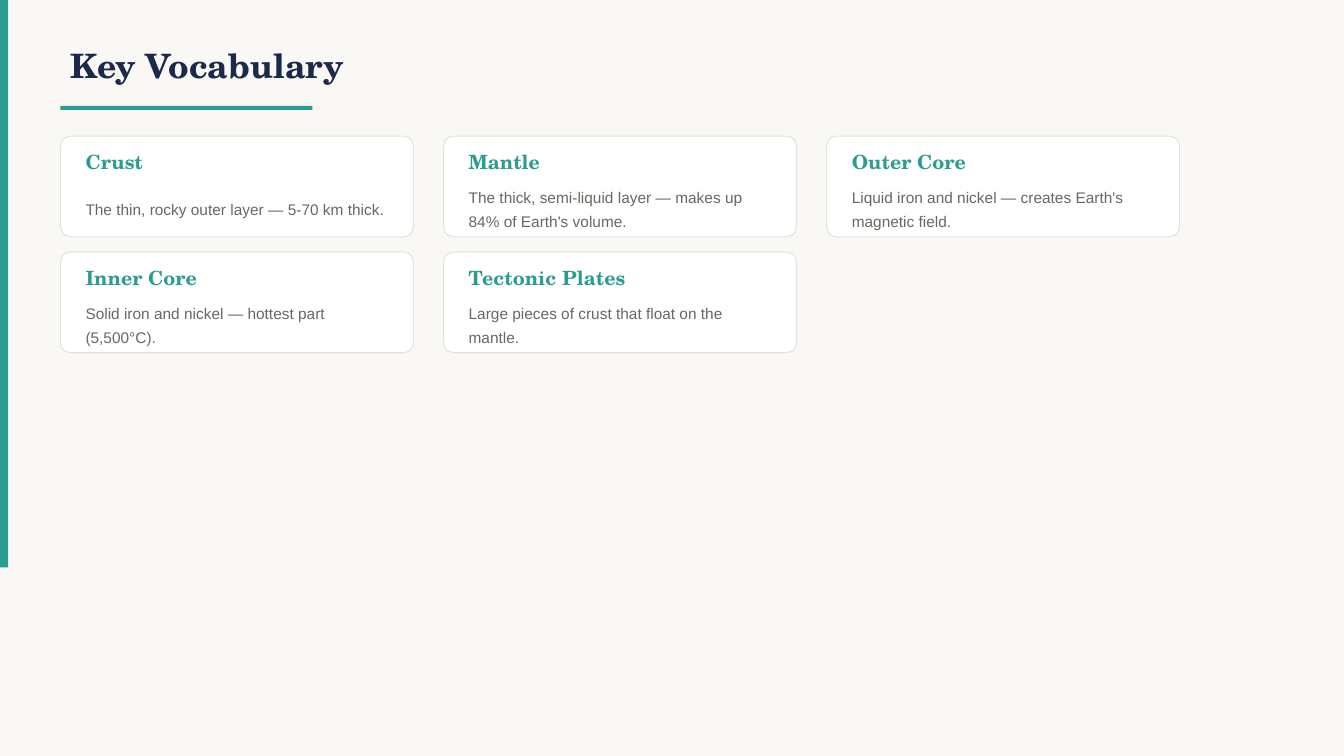
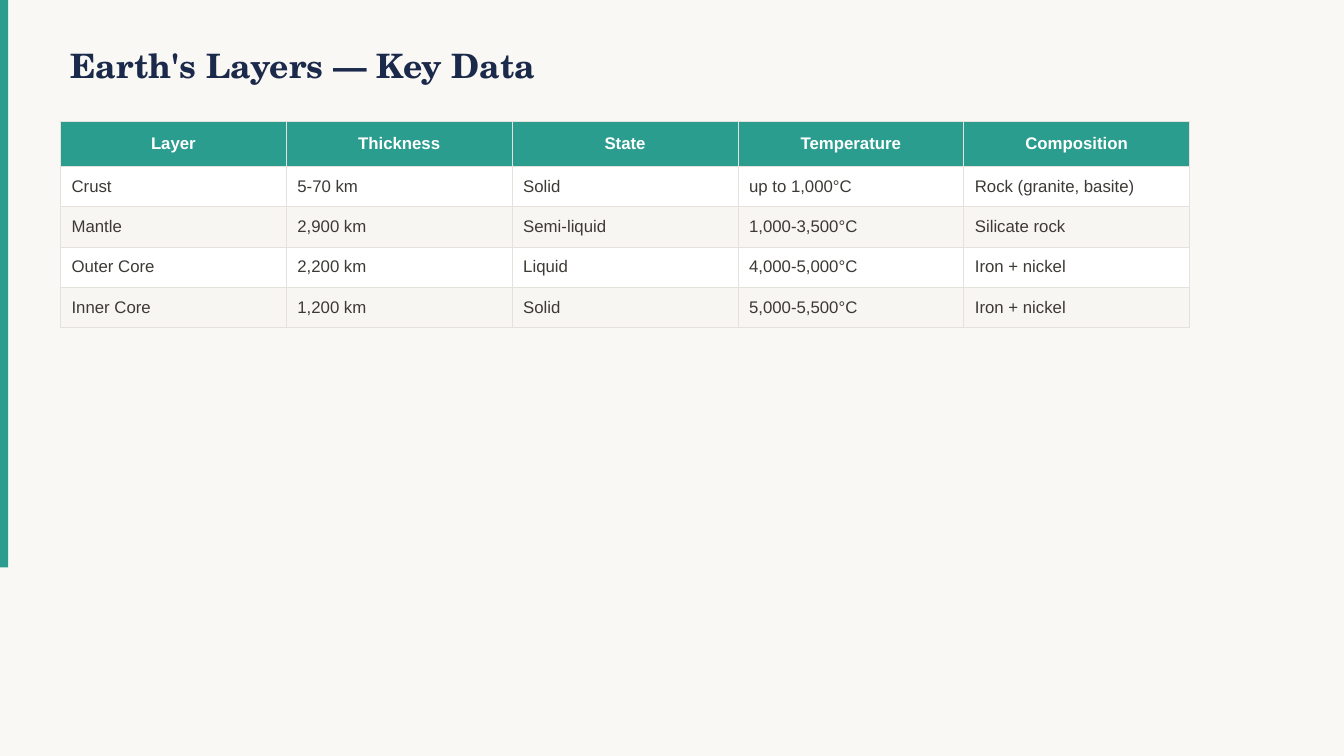
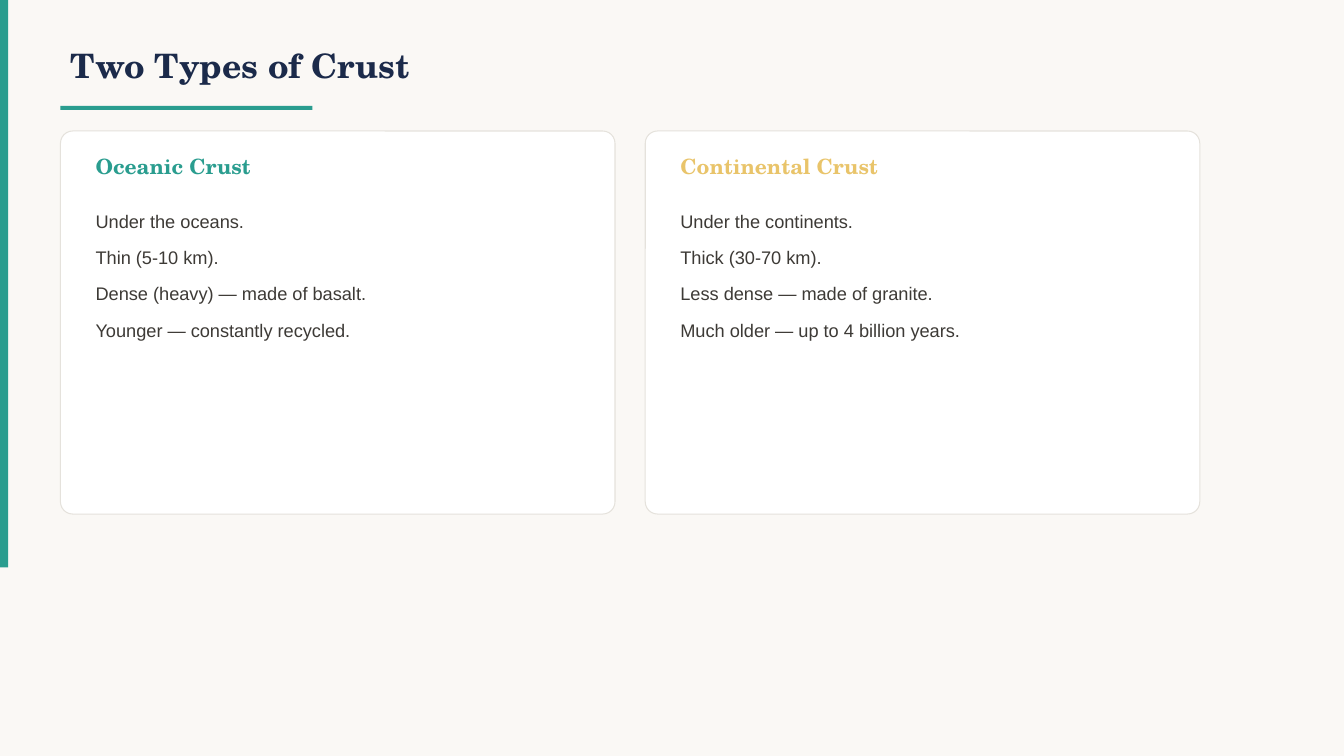
from lxml import etree
from pptx import Presentation
from pptx.dml.color import RGBColor
from pptx.enum.shapes import MSO_SHAPE
from pptx.enum.text import MSO_ANCHOR, PP_ALIGN
from pptx.oxml.ns import qn
from pptx.util import Inches, Pt

RECT, ROUND = MSO_SHAPE.RECTANGLE, MSO_SHAPE.ROUNDED_RECTANGLE
TOP, MIDDLE = MSO_ANCHOR.TOP, MSO_ANCHOR.MIDDLE
LEFT, CENTER = PP_ALIGN.LEFT, PP_ALIGN.CENTER

CREAM = RGBColor(0xFA, 0xF8, 0xF5)
TEAL = RGBColor(0x2A, 0x9D, 0x8F)
NAVY = RGBColor(0x1B, 0x2A, 0x4A)
GOLD = RGBColor(0xE9, 0xC4, 0x6A)
WHITE = RGBColor(0xFF, 0xFF, 0xFF)
STRIPE = RGBColor(0xF8, 0xF6, 0xF3)
BORDER = RGBColor(0xE5, 0xE2, 0xDC)
INK = RGBColor(0x3D, 0x3A, 0x36)
GRAY = RGBColor(0x6B, 0x66, 0x60)

SERIF, SANS = "TeX Gyre Schola", "Arial"
MARGIN = 0.6
CORNER = 0.1


class Deck:
    """Shared style and the slide being built."""

    def __init__(self):
        self.prs = Presentation()
        self.prs.slide_width = Inches(13.33)
        self.prs.slide_height = Inches(7.5)
        self.s = None

    def slide(self, title, underline=True):
        self.s = self.prs.slides.add_slide(self.prs.slide_layouts[6])
        self.s.background.fill.solid()
        self.s.background.fill.fore_color.rgb = CREAM
        self.box(0, 0, 0.08, 5.63, TEAL)
        self.heading(MARGIN, 0.3, 10, 0.7, title, 24, NAVY)
        if underline:
            self.box(MARGIN, 1.05, 2.5, 0.04, TEAL)

    def box(self, x, y, w, h, color, shape=RECT):
        sp = self.s.shapes.add_shape(shape, Inches(x), Inches(y), Inches(w), Inches(h))
        sp.shadow.inherit = False
        sp.fill.solid()
        sp.fill.fore_color.rgb = color
        sp.line.fill.background()
        return sp

    def card(self, x, y, w, h, radius):
        sp = self.box(x, y, w, h, WHITE, ROUND)
        sp.adjustments[0] = round(radius / min(w, h), 3)
        sp.line.color.rgb = BORDER
        sp.line.width = Pt(0.75)

    def style(self, p, size, color, name=SANS, bold=False):
        for r in p.runs:
            r.font.name, r.font.size, r.font.bold = name, Pt(size), bold
            r.font.color.rgb = color

    def text(self, x, y, w, h, text, size, color, name=SANS, bold=False,
             anchor=MIDDLE, spacing=None, after=None):
        sp = self.s.shapes.add_textbox(Inches(x), Inches(y), Inches(w), Inches(h))
        tf = sp.text_frame
        tf.word_wrap = True
        tf.vertical_anchor = anchor
        tf.text = text
        for p in tf.paragraphs:
            p.line_spacing = spacing
            p.space_after = after
            self.style(p, size, color, name, bold)

    def heading(self, x, y, w, h, text, size, color):
        self.text(x, y, w, h, text, size, color, SERIF, True)

    def table(self, x, y, col_w, header_h, row_h, rows):
        n_rows, n_cols = len(rows), len(rows[0])
        height = header_h + row_h * (n_rows - 1)
        table = self.s.shapes.add_table(n_rows, n_cols, Inches(x), Inches(y),
                                        Inches(col_w * n_cols), Inches(height)).table
        for i, row in enumerate(rows):
            header = i == 0
            table.rows[i].height = Inches(header_h if header else row_h)
            fill = TEAL if header else WHITE if i % 2 else STRIPE
            for j, value in enumerate(row):
                cell = table.cell(i, j)
                cell.text = value
                cell.vertical_anchor = MIDDLE
                cell.margin_left = cell.margin_right = Inches(0.11)
                cell.margin_top = cell.margin_bottom = Inches(0.06)
                self.cell_border(cell)
                cell.fill.solid()
                cell.fill.fore_color.rgb = fill
                p = cell.text_frame.paragraphs[0]
                p.alignment = CENTER if header else LEFT
                self.style(p, 12, WHITE if header else INK, bold=header)

    def cell_border(self, cell):
        tc_pr = cell._tc.get_or_add_tcPr()
        for side in ("a:lnL", "a:lnR", "a:lnT", "a:lnB"):
            ln = etree.SubElement(tc_pr, qn(side), w=str(Pt(0.5)))
            solid = etree.SubElement(ln, qn("a:solidFill"))
            etree.SubElement(solid, qn("a:srgbClr"), val=str(BORDER))


def vocabulary(deck):
    deck.slide("Key Vocabulary")
    terms = [
        ("Crust", "The thin, rocky outer layer — 5-70 km thick."),
        ("Mantle", "The thick, semi-liquid layer — makes up 84% of Earth's volume."),
        ("Outer Core", "Liquid iron and nickel — creates Earth's magnetic field."),
        ("Inner Core", "Solid iron and nickel — hottest part (5,500°C)."),
        ("Tectonic Plates", "Large pieces of crust that float on the mantle."),
    ]
    # Three cards to a row
    w, h, gap_x, gap_y = 3.5, 1, 0.3, 0.15
    for i, (term, meaning) in enumerate(terms):
        row, col = divmod(i, 3)
        x, y = MARGIN + col * (w + gap_x), 1.35 + row * (h + gap_y)
        deck.card(x, y, w, h, CORNER)
        deck.heading(x + 0.15, y + 0.08, w - 0.3, 0.35, term, 14, TEAL)
        deck.text(x + 0.15, y + 0.45, w - 0.3, 0.5, meaning, 11, GRAY, spacing=1.3)


def layer_data(deck):
    deck.slide("Earth's Layers — Key Data", underline=False)
    deck.table(MARGIN, 1.2, 2.24, 0.45, 0.4, [
        ("Layer", "Thickness", "State", "Temperature", "Composition"),
        ("Crust", "5-70 km", "Solid", "up to 1,000°C", "Rock (granite, basite)"),
        ("Mantle", "2,900 km", "Semi-liquid", "1,000-3,500°C", "Silicate rock"),
        ("Outer Core", "2,200 km", "Liquid", "4,000-5,000°C", "Iron + nickel"),
        ("Inner Core", "1,200 km", "Solid", "5,000-5,500°C", "Iron + nickel"),
    ])


def crust_types(deck):
    deck.slide("Two Types of Crust")
    columns = [
        ("Oceanic Crust", TEAL, [
            "Under the oceans.",
            "Thin (5-10 km).",
            "Dense (heavy) — made of basalt.",
            "Younger — constantly recycled.",
        ]),
        ("Continental Crust", GOLD, [
            "Under the continents.",
            "Thick (30-70 km).",
            "Less dense — made of granite.",
            "Much older — up to 4 billion years.",
        ]),
    ]
    # Two cards side by side
    w, y, gap = 5.5, 1.3, 0.3
    for i, (name, color, facts) in enumerate(columns):
        x = MARGIN + i * (w + gap)
        deck.card(x, y, w, 3.8, 0.12)
        deck.heading(x + 0.25, y + 0.15, w - 0.5, 0.4, name, 15, color)
        deck.text(x + 0.25, y + 0.65, w - 0.5, 2.9, "\n".join(facts), 13, INK,
                  anchor=TOP, spacing=1.4, after=Pt(4))


def main():
    deck = Deck()
    vocabulary(deck)
    layer_data(deck)
    crust_types(deck)
    deck.prs.save("out.pptx")


if __name__ == "__main__":
    main()
